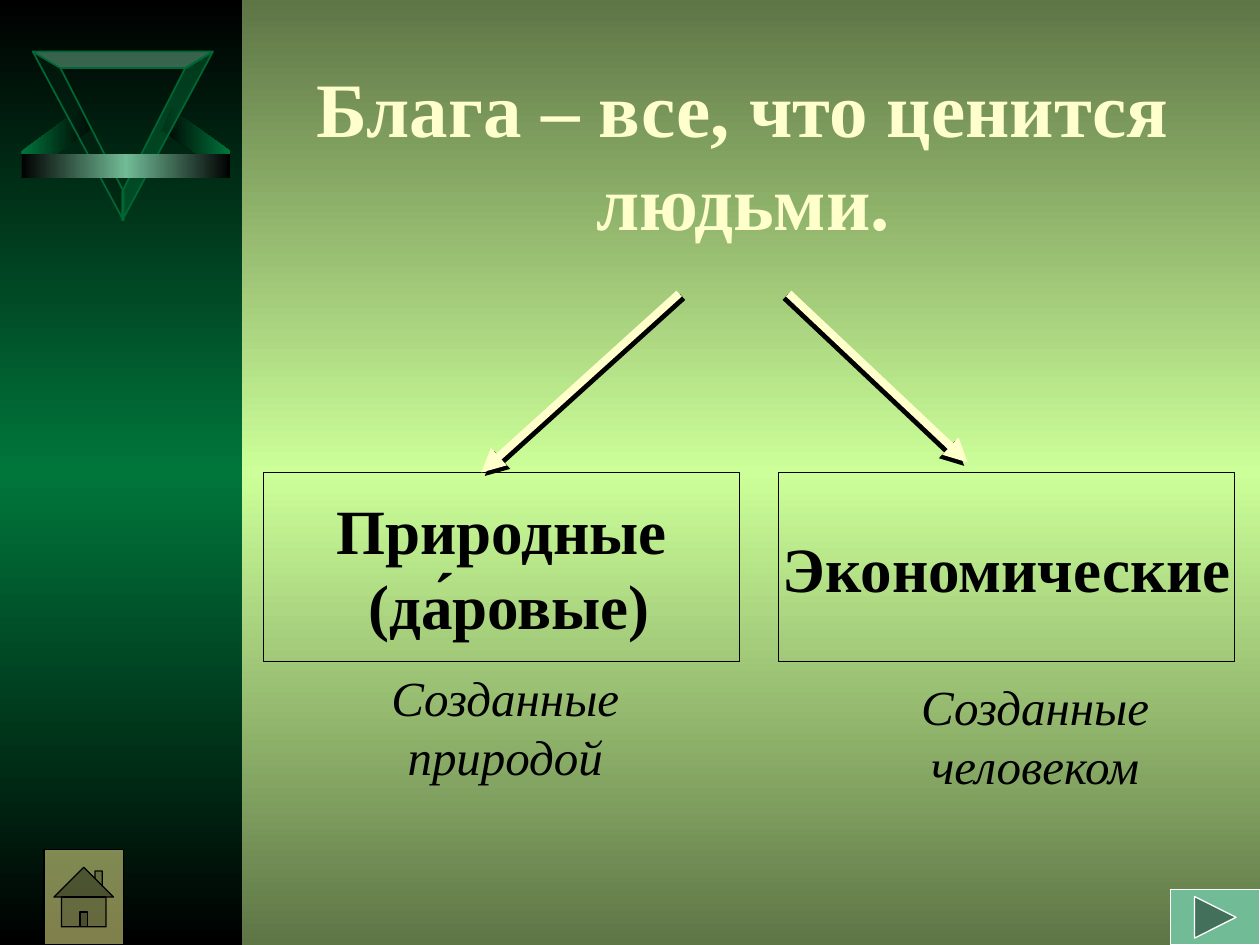
from lxml.etree import SubElement
from pptx import Presentation
from pptx.dml.color import RGBColor as RGB
from pptx.enum.shapes import MSO_CONNECTOR as Link, MSO_SHAPE as Kind
from pptx.enum.text import MSO_ANCHOR as Anchor, PP_ALIGN as Align
from pptx.oxml.ns import qn
from pptx.util import Inches, Pt

HUES = {
    "black": "000000", "white": "FFFFFF", "cream": "FFFFCC", "lemon": "FFFF99",
    "lime": "CCFF99", "moss": "5E7546", "leaf": "00763B", "pine": "006633",
    "dark": "002010", "mint": "71BB96",
}
FACE = "Times New Roman"
HEAD = {"size": Pt(44), "bold": True}
NAME = {"size": Pt(36), "bold": True}
NOTE = {"size": Pt(28), "italic": True}

TITLE = ("Блага – все, что ценится людьми.", (2.08, 0.25, 7.64, 1.93))
BOXES = [
    ([("Природные", 0), ("(да́ровые)", 0.12)], (2.09, 3.75, 3.78, 1.5)),
    ([("Экономические", 0)], (6.18, 3.75, 3.62, 1.5)),
]
NOTES = [
    ("Созданные природой", (2.4, 5.25, 2.84, 1.26)),
    ("Созданные человеком", (6.57, 5.32, 2.91, 1.34)),
]
ARROWS = [
    ((5.39, 2.33), (3.82, 3.75), 45),
    ((6.26, 2.33), (7.68, 3.67), 135),
]
WING = [(0.17, 1.2), (0.17, 1.41), (0.72, 1.03), (0.72, 1.05), (0.64, 0.86)]
SIDE = [(0.98, 1.75), (0.98, 1.52), (0.48, 0.54), (0.26, 0.41)]
TOP = [(0.26, 0.41), (0.48, 0.54), (1.48, 0.54), (1.69, 0.41)]


def flip(pts, total):
    return [(total - x, y) for x, y in pts]


def tint(node, hue, alpha=100):
    clr = SubElement(node, qn("a:srgbClr"), val=HUES[hue])
    if alpha < 100:
        SubElement(clr, qn("a:alpha"), val=str(alpha * 1000))


def blend(fill, root, hues, angle):
    fill.gradient()
    fill.gradient_angle = angle
    stops = root.xpath(".//a:gsLst")[0]
    for old in list(stops):
        stops.remove(old)
    for i, hue in enumerate(hues):
        pos = str(i * 100000 // (len(hues) - 1))
        tint(SubElement(stops, qn("a:gs"), pos=pos), hue)


def cast(node, angle, dist):
    fx = SubElement(node, qn("a:effectLst"))
    drop = SubElement(fx, qn("a:outerShdw"), blurRad="0", dist=str(Pt(dist)),
                      dir=str(angle * 60000), algn="ctr", rotWithShape="0")
    tint(drop, "black")


def paint(shape, fill=None, line=None, width=0.75, alpha=100, angle=0):
    shape.shadow.inherit = False
    if fill is None:
        shape.fill.background()
    elif isinstance(fill, list):
        blend(shape.fill, shape.element, fill, angle)
    else:
        shape.fill.solid()
        shape.fill.fore_color.rgb = RGB.from_string(HUES[fill])
        if alpha < 100:
            clr = shape.element.spPr.find(qn("a:solidFill"))[0]
            SubElement(clr, qn("a:alpha"), val=str(alpha * 1000))
    if line:
        shape.line.color.rgb = RGB.from_string(HUES[line])
        shape.line.width = Pt(width)
    else:
        shape.line.fill.background()


def block(kind, at, **look):
    shape = shapes.add_shape(kind, *map(Inches, at))
    paint(shape, **look)
    return shape


def form(pts, **look):
    first, *rest = [(Inches(x), Inches(y)) for x, y in pts]
    pen = shapes.build_freeform(*first)
    pen.add_line_segments(rest, close=True)
    paint(pen.convert_to_shape(), **look)


def write(shape, paras, style, hue="black", wrap=True, anchor=Anchor.TOP):
    frame = shape.text_frame
    frame.word_wrap = wrap
    frame.vertical_anchor = anchor
    for i, (text, left) in enumerate(paras):
        para = frame.add_paragraph() if i else frame.paragraphs[0]
        para.alignment = Align.CENTER
        if left:
            props = para._p.get_or_add_pPr()
            props.set("marL", str(Inches(left)))
            props.set("indent", "0")
        run = para.add_run()
        run.text = text
        run.font.color.rgb = RGB.from_string(HUES[hue])
        if style is HEAD:
            cast(run.font._element, 45, 2.8)
        for key, val in {"name": FACE, **style}.items():
            setattr(run.font, key, val)


def label(at):
    return shapes.add_textbox(*map(Inches, at))


deck = Presentation()
deck.slide_width, deck.slide_height = Inches(10), Inches(7.5)
slide = deck.slides.add_slide(deck.slide_layouts[6])
shapes = slide.shapes
blend(slide.background.fill, slide.element, ["moss", "lime", "moss"], 270)

block(Kind.RECTANGLE, (0, 0, 1.92, 7.5), fill=["black", "leaf", "black"], angle=270)
form(flip(WING, 2), fill=["black", "leaf"])
form(WING, fill=["leaf", "black"])
for pts, hue in [(SIDE, "dark"), (TOP, "mint"), (flip(SIDE, 1.95), "pine")]:
    form(pts, fill=hue, alpha=50, line="pine", width=1)
block(Kind.RECTANGLE, (0.17, 1.22, 1.66, 0.19), fill=["black", "mint", "black"])

text, at = TITLE
write(label(at), [(text, 0)], HEAD, "cream", anchor=Anchor.MIDDLE)
for paras, at in BOXES:
    box = block(Kind.RECTANGLE, at, line="black")
    write(box, paras, NAME, wrap=False, anchor=Anchor.MIDDLE)
for text, at in NOTES:
    write(label(at), [(text, 0.38)], NOTE)

for start, end, angle in ARROWS:
    arrow = shapes.add_connector(Link.STRAIGHT, *map(Inches, start + end))
    arrow.line.color.rgb = RGB.from_string(HUES["cream"])
    arrow.line.width = Pt(4.5)
    SubElement(arrow.line._get_or_add_ln(), qn("a:tailEnd"), type="triangle")
    cast(arrow.element.spPr, angle, 2.8)

back = block(Kind.ACTION_BUTTON_BACK_OR_PREVIOUS, (9.29, 7.06, 0.71, 0.44),
             fill="mint", line="white")
back.rotation = 180
block(Kind.ACTION_BUTTON_HOME, (0.35, 6.74, 0.63, 0.76),
      fill="lemon", alpha=50, line="black")

deck.save("out.pptx")
